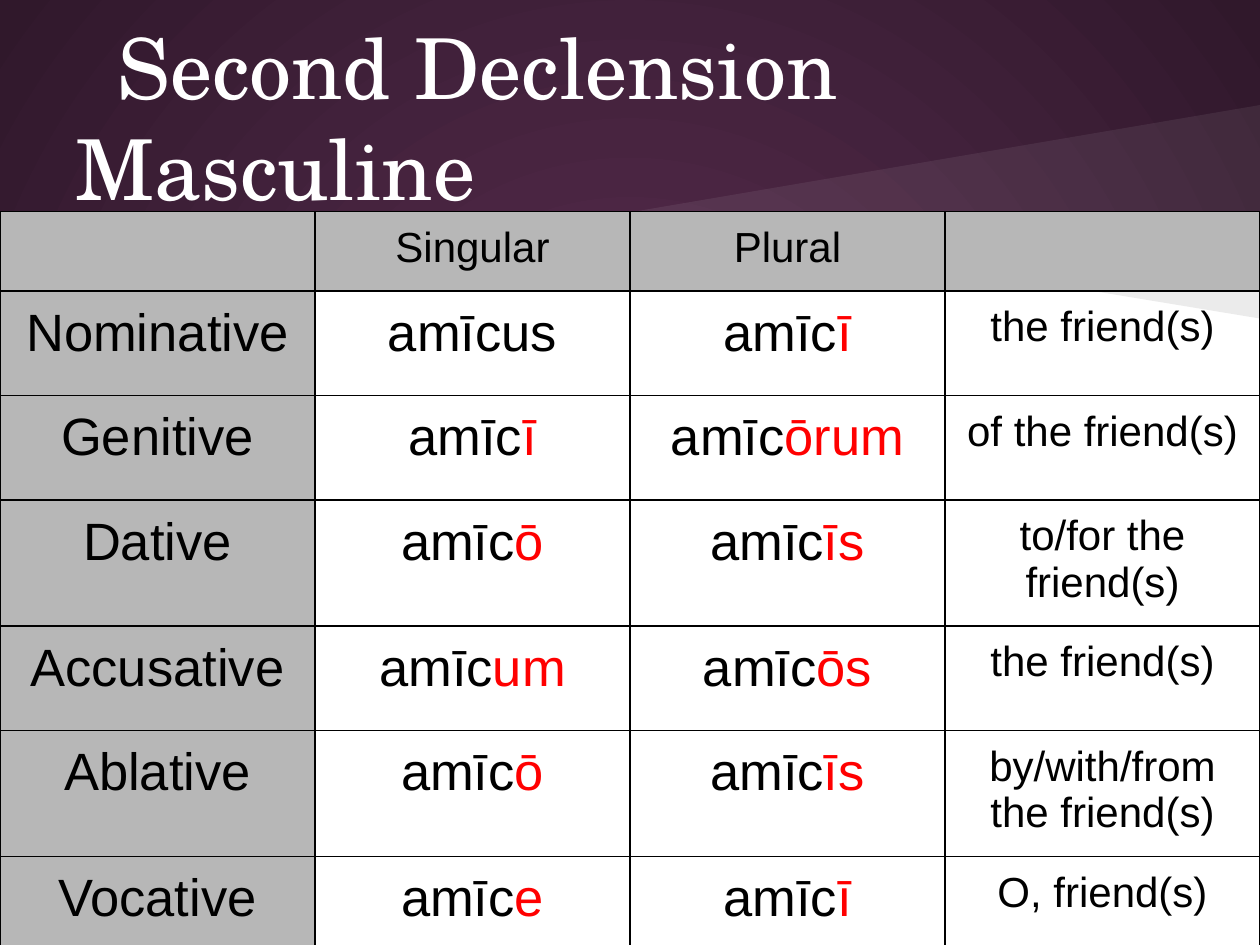
import pptx
import pptx.util
import pptx.dml.color
import pptx.enum.shapes
import pptx.enum.text
import pptx.oxml
import pptx.oxml.ns

Pt = pptx.util.Pt
RGBColor = pptx.dml.color.RGBColor
PP_ALIGN = pptx.enum.text.PP_ALIGN
ANCHOR = pptx.enum.text.MSO_ANCHOR
qn = pptx.oxml.ns.qn

PLUM = RGBColor(0x59, 0x2D, 0x50)
DARK_PLUM = RGBColor(0x30, 0x18, 0x2B)
WHITE = RGBColor(0xFF, 0xFF, 0xFF)
BLACK = RGBColor(0, 0, 0)
RED = RGBColor(0xFF, 0, 0)
GREY = RGBColor(0xB7, 0xB7, 0xB7)

TITLE = "Second Declension Masculine"
STEM = "amīc"
HEADINGS = ["", "Singular", "Plural", ""]
CASES = [
    ("Nominative", "us", "ī", "the friend(s)"),
    ("Genitive", "ī", "ōrum", "of the friend(s)"),
    ("Dative", "ō", "īs", "to/for the friend(s)"),
    ("Accusative", "um", "ōs", "the friend(s)"),
    ("Ablative", "ō", "īs", "by/with/from the friend(s)"),
    ("Vocative", "e", "ī", "O, friend(s)"),
]
UNMARKED = "us"

WIDTH, HEIGHT = 720, 540
HORIZON = 122.4
WEDGE_LEFT, WEDGE_RISE = 356.4, 62.5
TABLE_TOP = 121
ROW_HEIGHTS = [45.3] + [59.7] * 5 + [61.2]
INSET = 7.2


def write(frame, runs, size, font="Arial", align=PP_ALIGN.CENTER):
    paragraph = frame.paragraphs[0]
    paragraph.alignment = align
    for text, color in runs:
        run = paragraph.add_run()
        run.text = text
        run.font.size = Pt(size)
        run.font.name = font
        run.font.color.rgb = color
    return paragraph


def paint(shape, color, opacity=100):
    shape.shadow.inherit = False
    shape.fill.solid()
    shape.fill.fore_color.rgb = color
    shape.line.fill.background()
    if opacity < 100:
        tint = shape.fill._xPr.find(".//" + qn("a:srgbClr"))
        alpha = tint.makeelement(qn("a:alpha"), {"val": str(opacity * 1000)})
        tint.append(alpha)


def add_wedge(slide, edge, color, opacity):
    builder = slide.shapes.build_freeform(WIDTH, HORIZON, scale=Pt(1))
    builder.add_line_segments([(WEDGE_LEFT, HORIZON), (WIDTH, edge)], close=True)
    paint(builder.convert_to_shape(), color, opacity)


def add_backdrop(slide):
    fill = slide.background.fill
    fill.gradient()
    for stop, color in zip(fill.gradient_stops, (PLUM, DARK_PLUM)):
        stop.color.rgb = color
    linear = slide.element.find(".//" + qn("a:lin"))
    radial = pptx.oxml.parse_xml(
        f'<a:path {pptx.oxml.ns.nsdecls("a")} path="circle">'
        '<a:fillToRect l="50000" t="50000" r="50000" b="50000"/></a:path>')
    linear.getparent().replace(linear, radial)
    panel = slide.shapes.add_shape(
        pptx.enum.shapes.MSO_SHAPE.RECTANGLE,
        0, Pt(HORIZON), Pt(WIDTH), Pt(HEIGHT - HORIZON))
    paint(panel, WHITE)
    add_wedge(slide, HORIZON - WEDGE_RISE, WHITE, 7)
    add_wedge(slide, HORIZON + WEDGE_RISE * 0.96, BLACK, 8)


def add_title(slide):
    frame = slide.shapes.add_textbox(Pt(36), Pt(21.6), Pt(648), Pt(90)).text_frame
    frame.word_wrap = True
    frame.vertical_anchor = ANCHOR.MIDDLE
    frame.margin_left = frame.margin_right = Pt(INSET)
    frame.margin_top = frame.margin_bottom = Pt(INSET)
    paragraph = write(frame, [(TITLE, WHITE)], 48, "TeX Gyre Schola", PP_ALIGN.LEFT)
    paragraph._p.get_or_add_pPr().set("indent", str(Pt(24)))


def add_borders(cell):
    properties = cell._tc.get_or_add_tcPr()
    for index, side in enumerate(("lnL", "lnR", "lnT", "lnB")):
        properties.insert(index, pptx.oxml.parse_xml(
            f'<a:{side} {pptx.oxml.ns.nsdecls("a")} w="{Pt(0.75)}">'
            f'<a:solidFill><a:srgbClr val="{BLACK}"/></a:solidFill></a:{side}>'))


def form(ending):
    if ending == UNMARKED:
        return [(STEM + ending, BLACK)]
    return [(STEM, BLACK), (ending, RED)]


def add_declension(slide):
    rows = [[([(heading, BLACK)], 24) for heading in HEADINGS]]
    for name, singular, plural, meaning in CASES:
        rows.append([([(name, BLACK)], 30), (form(singular), 30),
                     (form(plural), 30), ([(meaning, BLACK)], 24)])
    table = slide.shapes.add_table(
        len(rows), len(HEADINGS), 0, Pt(TABLE_TOP), Pt(WIDTH), Pt(sum(ROW_HEIGHTS))).table
    table.first_row = table.horz_banding = False
    for r, row in enumerate(rows):
        table.rows[r].height = Pt(ROW_HEIGHTS[r])
        for c, (runs, size) in enumerate(row):
            cell = table.cell(r, c)
            cell.margin_left = cell.margin_right = Pt(INSET)
            cell.margin_top = cell.margin_bottom = Pt(INSET)
            if r == 0 or c == 0:
                cell.fill.solid()
                cell.fill.fore_color.rgb = GREY
            else:
                cell.fill.background()
            add_borders(cell)
            if runs[0][0]:
                write(cell.text_frame, runs, size)


def main():
    deck = pptx.Presentation()
    deck.slide_width, deck.slide_height = Pt(WIDTH), Pt(HEIGHT)
    slide = deck.slides.add_slide(deck.slide_layouts[6])
    add_backdrop(slide)
    add_title(slide)
    add_declension(slide)
    deck.save("out.pptx")


if __name__ == "__main__":
    main()
